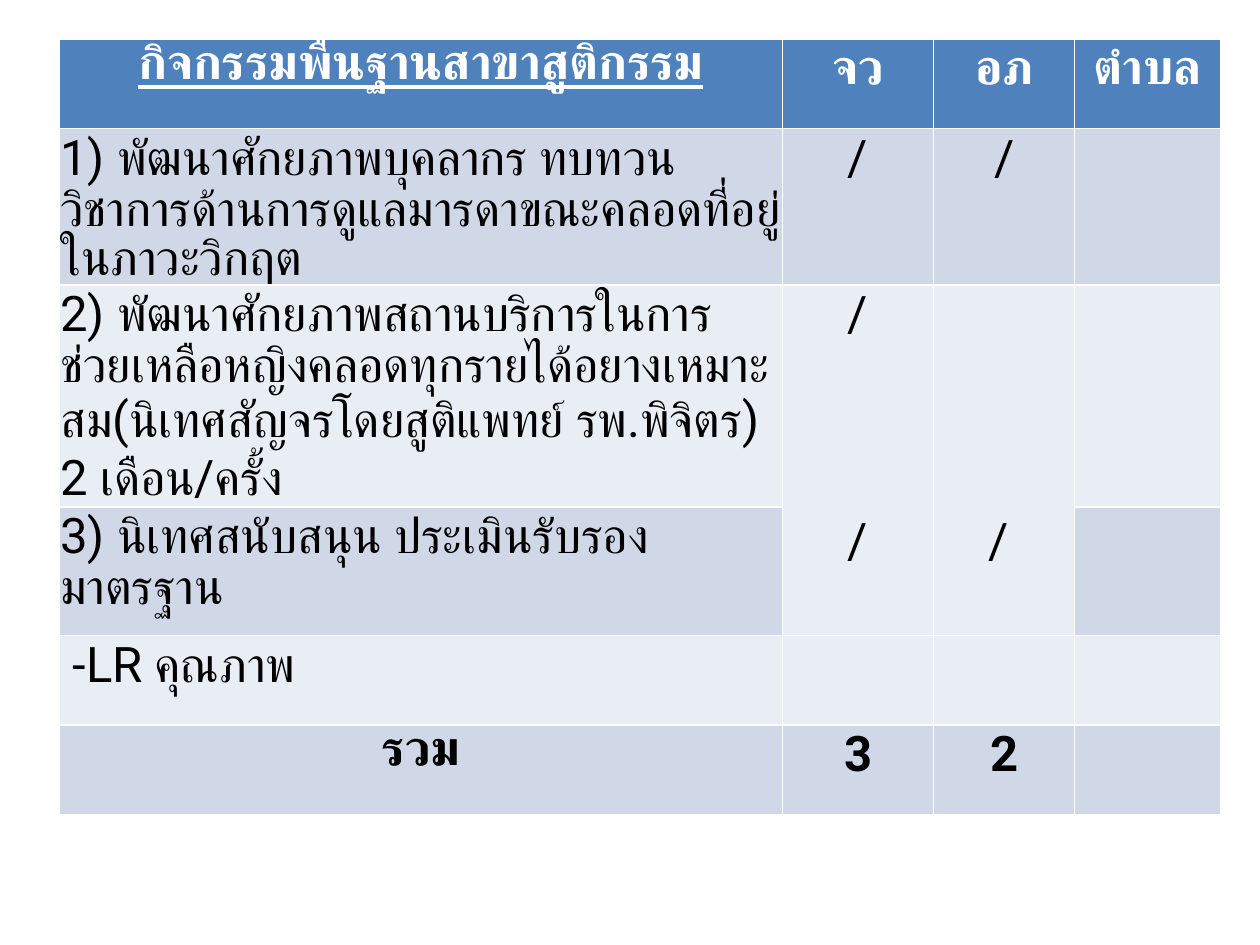
from pptx import Presentation
from pptx.dml.color import RGBColor
from pptx.enum.text import PP_ALIGN as Align
from pptx.util import Inches, Pt

FONT = "Roboto"
SIZE = 28
HEADER, DARK, LIGHT = "4F81BD", "D0D8E8", "E9EDF4"
BLACK, WHITE = "000000", "FFFFFF"
COLS = [5.74, 1.2, 1.12, 1.16]
HEIGHTS = [0.71, 0.61, 1.29, 1.02, 0.71, 0.71]
MARK_DROP = 1.81
MARK_GAP = 97
ROWS = [
    ["กิจกรรมพื้นฐานสาขาสูติกรรม", "จว", "อภ", "ตำบล"],
    ["1) พัฒนาศักยภาพบุคลากร ทบทวนวิชาการด้านการดูแลมารดาขณะคลอดที่อยู่ในภาวะวิกฤต", "/", "/", ""],
    ["2) พัฒนาศักยภาพสถานบริการในการช่วยเหลือหญิงคลอดทุกรายได้อยางเหมาะสม"
     "(นิเทศสัญจรโดยสูติแพทย์ รพ.พิจิตร) 2 เดือน/ครั้ง", "/\n/", "/ ", ""],
    ["3) นิเทศสนับสนุน ประเมินรับรองมาตรฐาน", "", "", ""],
    [" -LR คุณภาพ", "", "", ""],
    ["รวม", "3", "2", ""],
]


def rgb(value):
    return RGBColor.from_string(value)


def fill_cell(cell, color):
    cell.fill.solid()
    cell.fill.fore_color.rgb = rgb(color)


def set_margins(cell):
    cell.margin_left = cell.margin_right = cell.margin_top = Inches(0.01)
    cell.margin_bottom = 0


def write_cell(cell, text, color, align, bold=False, underline=False):
    tf = cell.text_frame
    for i, line in enumerate(text.split("\n")):
        p = tf.add_paragraph() if i else tf.paragraphs[0]
        p.alignment = align
        if i:
            p.space_before = Pt(MARK_GAP)
        r = p.add_run()
        r.text = line
        r.font.name = FONT
        r.font.size = Pt(SIZE)
        r.font.bold = bold
        r.font.underline = underline
        r.font.color.rgb = rgb(color)


def add_activity_table(s):
    frame = s.shapes.add_table(len(ROWS), len(COLS), Inches(0.47), Inches(0.31),
                               Inches(sum(COLS)), Inches(sum(HEIGHTS)))
    table = frame.table
    for column, width in zip(table.columns, COLS):
        column.width = Inches(width)
    for row, height in zip(table.rows, HEIGHTS):
        row.height = Inches(height)
    for i, texts in enumerate(ROWS):
        header, total = i == 0, i == len(ROWS) - 1
        for j, text in enumerate(texts):
            cell = table.cell(i, j)
            fill_cell(cell, HEADER if header else DARK if i % 2 else LIGHT)
            if not text:
                continue
            if not header or j == 0:
                set_margins(cell)
            centred = header or total or j > 0
            write_cell(cell, text, WHITE if header else BLACK,
                       Align.CENTER if centred else Align.LEFT,
                       bold=header or total, underline=header and j == 0)
    for j in (1, 2):
        table.cell(2, j).merge(table.cell(3, j))
    table.cell(2, 2).margin_top = Inches(MARK_DROP)


def main():
    prs = Presentation()
    prs.slide_width, prs.slide_height = Inches(10), Inches(7.5)
    s = prs.slides.add_slide(prs.slide_layouts[6])
    add_activity_table(s)
    prs.save("out.pptx")


if __name__ == "__main__":
    main()
